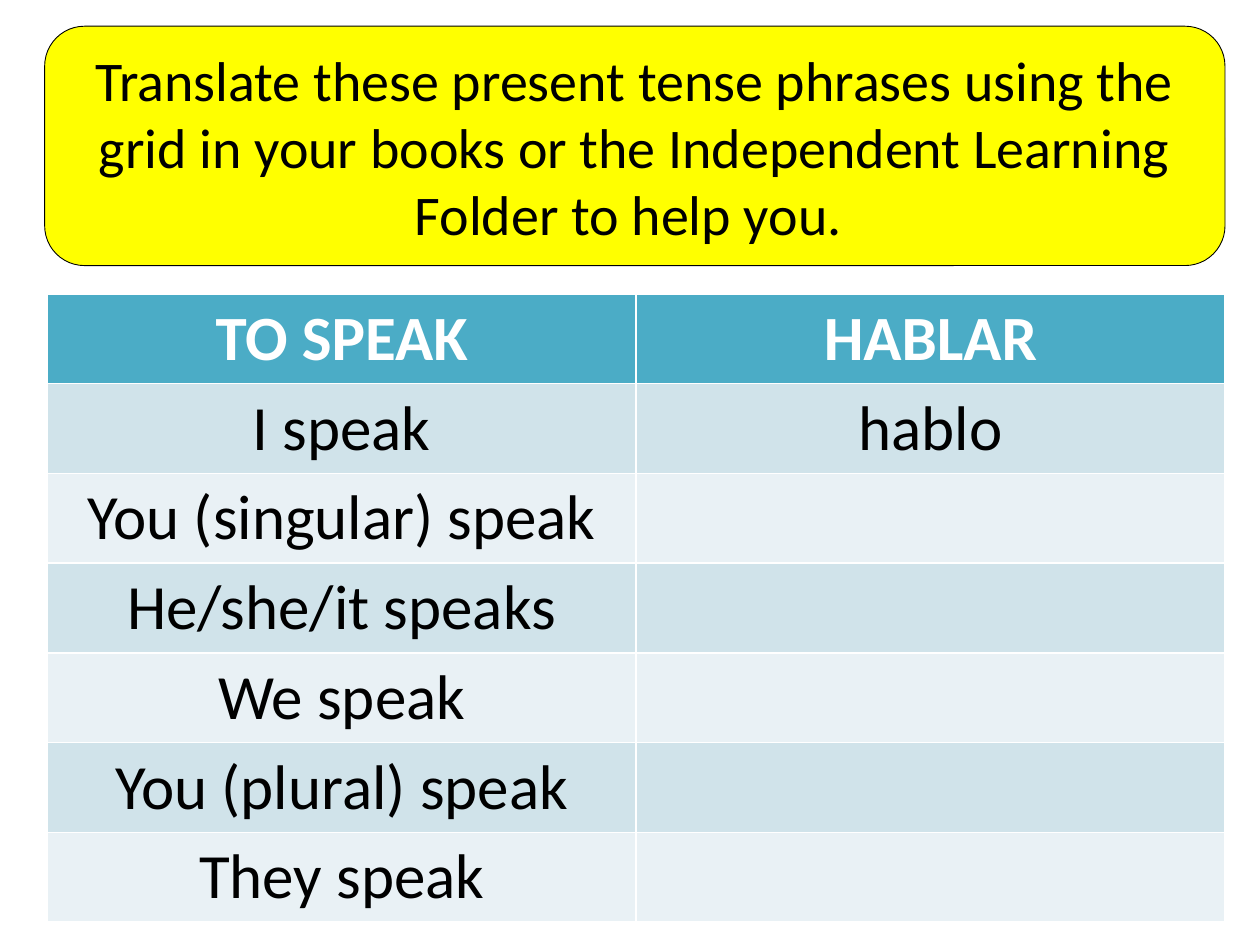
from pptx import Presentation
from pptx.dml.color import RGBColor
from pptx.enum.shapes import MSO_SHAPE
from pptx.enum.text import MSO_ANCHOR, PP_ALIGN
from pptx.util import Pt

PHRASES = [
    ("TO SPEAK", "HABLAR"),
    ("I speak", "hablo"),
    ("You (singular) speak", ""),
    ("He/she/it speaks", ""),
    ("We speak", ""),
    ("You (plural) speak", ""),
    ("They speak", ""),
]
HEADER_FILL = "4BACC6"
BAND_FILLS = ("E9F1F5", "D0E3EA")


def color(hex_code):
    return RGBColor.from_string(hex_code)


def paint(target, hex_code):
    target.fill.solid()
    target.fill.fore_color.rgb = color(hex_code)


def write(frame, text, size=36, ink="000000", bold=False):
    paragraph = frame.paragraphs[0]
    paragraph.alignment = PP_ALIGN.CENTER
    run = paragraph.add_run()
    run.text = text
    font = run.font
    font.name, font.size, font.bold = "Calibri", Pt(size), bold
    font.color.rgb = color(ink)


def add_instruction(slide, left, top, width, height):
    banner = slide.shapes.add_shape(
        MSO_SHAPE.ROUNDED_RECTANGLE, Pt(left), Pt(top), Pt(width), Pt(height))
    banner.shadow.inherit = False
    paint(banner, "FFFF00")
    banner.line.color.rgb = color("000000")
    banner.line.width = Pt(0.5)
    banner.text_frame.word_wrap = True
    banner.text_frame.vertical_anchor = MSO_ANCHOR.MIDDLE
    write(banner.text_frame,
          "Translate these present tense phrases using the grid in your books "
          "or the Independent Learning Folder to help you. ", size=32)


def add_verb_table(slide, left, top, width, height):
    # The default table style supplies the white rules between cells
    verbs = slide.shapes.add_table(
        len(PHRASES), 2, Pt(left), Pt(top), Pt(width), Pt(height)).table
    for row, pair in enumerate(PHRASES):
        header = row == 0
        for column, phrase in enumerate(pair):
            cell = verbs.cell(row, column)
            paint(cell, HEADER_FILL if header else BAND_FILLS[row % 2])
            if phrase:
                write(cell.text_frame, phrase, bold=header,
                      ink="FFFFFF" if header else "000000")


def main():
    deck = Presentation()
    deck.slide_width, deck.slide_height = Pt(720), Pt(540)
    slide = deck.slides.add_slide(deck.slide_layouts[6])
    # Instruction above, verb table below
    add_instruction(slide, 25.5, 15, 674.5, 136.8)
    add_verb_table(slide, 27, 168, 673, 352.8)
    deck.save("out.pptx")


if __name__ == "__main__":
    main()
